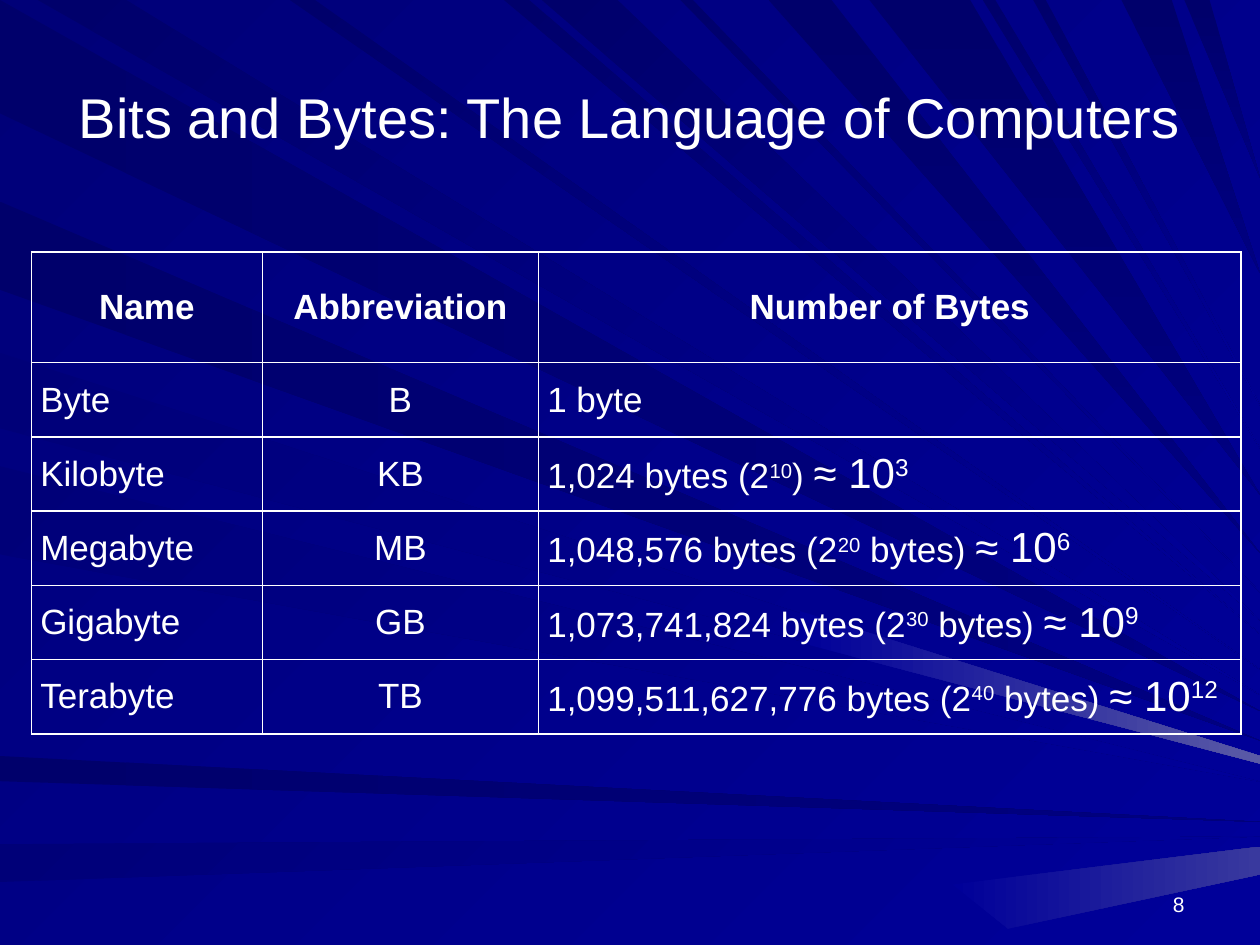
from collections import namedtuple

from lxml import etree
from pptx import Presentation
from pptx import util as u
from pptx.dml.color import RGBColor
from pptx.enum import text
from pptx.oxml import ns

Box = namedtuple("Box", "left top width height")

WHITE = RGBColor(0xFF, 0xFF, 0xFF)
DARK = RGBColor(0x00, 0x00, 0x6B)
DEEP = RGBColor(0x00, 0x00, 0x78)
NAVY = RGBColor(0x00, 0x00, 0x80)
BLUE = RGBColor(0x00, 0x00, 0x99)
GLOW = RGBColor(0x5A, 0x5A, 0xA6)
DIM_GLOW = RGBColor(0x39, 0x39, 0x9E)

FONT = "Arial"
LEFT, CENTER, RIGHT = text.PP_ALIGN.LEFT, text.PP_ALIGN.CENTER, text.PP_ALIGN.RIGHT
MIDDLE, BOTTOM = text.MSO_ANCHOR.MIDDLE, text.MSO_ANCHOR.BOTTOM

GRID = 10
FOCUS_X, FOCUS_Y = 11.84, 6.6
COLUMN_WEIGHTS = (1.83, 2.19, 5.57)
ROW_WEIGHTS = (0.88,) + (0.59,) * 5
HEADINGS = ("Name", "Abbreviation", "Number of Bytes")
UNITS = (("Byte", "B"), ("Kilobyte", "KB"), ("Megabyte", "MB"), ("Gigabyte", "GB"), ("Terabyte", "TB"))

LEFT_DARK_RAYS = ((0, 0.9), (1.6, 2.3), (6, 6.2))
LEFT_BLUE_RAYS = ((2.8, 3.4), (3.7, 4.4), (6.7, 7))
TOP_DARK_RAYS = ((6.1, 6.6), (6.9, 7.7), (8.9, 9.3), (9.4, 9.6))
TOP_BLUE_RAYS = ((0.3, 1), (2.3, 2.5), (4, 4.2), (4.3, 4.9), (5.4, 5.5), (7.8, 7.9), (8.2, 8.3))


def share(box, left, top, width, height):
    """Return the part of a box given by shares of its size."""
    return Box(
        int(box.left + box.width * left),
        int(box.top + box.height * top),
        int(box.width * width),
        int(box.height * height),
    )


def paint(fill, start, end, angle):
    """Fill with a gradient turned clockwise by angle."""
    fill.gradient()
    fill.gradient_angle = -angle % 360
    for stop, colour in zip(fill.gradient_stops, (start, end)):
        stop.color.rgb = colour


def add_text(para, words, size=20, bold=False, raised=False, align=LEFT):
    """Add a formatted run to a paragraph."""
    para.alignment = align
    span = para.add_run()
    span.text = words
    span.font.name = FONT
    span.font.size = u.Pt(size)
    span.font.bold = bold
    span.font.color.rgb = WHITE
    if raised:
        span.font._element.set("baseline", "30000")


def draw_ray(group, box, corners, start, end, angle):
    """Draw one ray through corners given in grid columns."""
    unit = box.width / GRID
    points = [(box.left + x * unit, box.top + y * unit) for x, y in corners]
    builder = group.shapes.build_freeform(*points[0])
    builder.add_line_segments(points[1:], close=True)
    ray = builder.convert_to_shape()
    ray.shadow.inherit = False
    ray.line.fill.background()
    paint(ray.fill, start, end, angle)


def find_tip(x, y):
    """Return where the line from a point to the focus meets the right edge."""
    return GRID, y + (FOCUS_Y - y) * (GRID - x) / (FOCUS_X - x)


def draw_rays(page, box):
    """Draw the fan of light rays over the background."""
    paint(page.background.fill, DEEP, BLUE, 45)
    group = page.shapes.add_group_shape()
    for rays, start, end, angle in ((LEFT_DARK_RAYS, DARK, NAVY, 0), (LEFT_BLUE_RAYS, DEEP, BLUE, 45)):
        for near, far in rays:
            tip = find_tip(0, (near + far) / 2)
            draw_ray(group, box, ((0, near), tip, (0, far)), start, end, angle)
    for rays, start, end, angle in ((TOP_BLUE_RAYS, DARK, BLUE, 45), (TOP_DARK_RAYS, DARK, NAVY, 90)):
        for near, far in rays:
            tip = find_tip((near + far) / 2, 0)
            draw_ray(group, box, ((near, 0), tip, (far, 0)), start, end, angle)
    draw_ray(group, box, ((6.35, 4.85), (10, 6), (10, 6.06), (6.35, 5.1)), BLUE, GLOW, 0)
    draw_ray(group, box, ((7.56, 7.02), (10, 6.72), (10, 6.94), (8, 7.37)), BLUE, DIM_GLOW, 0)
    page.shapes._spTree.insert(2, group._element)


def draw_title(page, box):
    """Place the slide title in its placeholder."""
    title = page.shapes.title
    title.left, title.top, title.width, title.height = box
    frame = title.text_frame
    frame.auto_size = text.MSO_AUTO_SIZE.NONE
    frame.vertical_anchor = MIDDLE
    add_text(frame.paragraphs[0], "Bits and Bytes: The Language of Computers", size=32, align=CENTER)


def draw_number(page, box):
    """Place the page number at the lower right."""
    frame = page.shapes.add_textbox(*box).text_frame
    frame.word_wrap = True
    frame.vertical_anchor = BOTTOM
    add_text(frame.paragraphs[0], "8", size=12, align=RIGHT)


def format_cell(cell):
    """Give a cell thin white borders, no fill and narrow margins."""
    properties = cell._tc.get_or_add_tcPr()
    for side in ("a:lnL", "a:lnR", "a:lnT", "a:lnB"):
        border = etree.SubElement(properties, ns.qn(side), w=str(u.Pt(1)))
        solid = etree.SubElement(border, ns.qn("a:solidFill"))
        etree.SubElement(solid, ns.qn("a:srgbClr"), val=str(WHITE))
    cell.fill.background()
    cell.vertical_anchor = MIDDLE
    cell.margin_left = cell.margin_right = u.Inches(0.07)
    cell.margin_top = cell.margin_bottom = 0


def write_size(para, power):
    """Write the number of bytes in the unit of the given power of 1,024."""
    if power == 0:
        add_text(para, "1 byte")
        return
    add_text(para, f"{1024 ** power:,} bytes (2")
    add_text(para, str(10 * power), raised=True)
    add_text(para, ") " if power == 1 else " bytes) ")
    add_text(para, "≈ 10", size=24)
    add_text(para, str(3 * power), size=24, raised=True)


def draw_table(page, box):
    """Draw the table of byte units."""
    table = page.shapes.add_table(len(ROW_WEIGHTS), len(COLUMN_WEIGHTS), *box).table
    table.first_row = table.horz_banding = False
    for column, weight in zip(table.columns, COLUMN_WEIGHTS):
        column.width = int(box.width * weight / sum(COLUMN_WEIGHTS))
    for row, weight in zip(table.rows, ROW_WEIGHTS):
        row.height = int(box.height * weight / sum(ROW_WEIGHTS))
    for cell in table.iter_cells():
        format_cell(cell)
    for cell, heading in zip(table.rows[0].cells, HEADINGS):
        add_text(cell.text_frame.paragraphs[0], heading, bold=True, align=CENTER)
    for power, (name, abbreviation) in enumerate(UNITS):
        paras = [cell.text_frame.paragraphs[0] for cell in table.rows[power + 1].cells]
        add_text(paras[0], name)
        add_text(paras[1], abbreviation, align=CENTER)
        write_size(paras[2], power)


def main():
    """Build the slide and save it."""
    deck = Presentation()
    deck.slide_width, deck.slide_height = u.Inches(10), u.Inches(7.5)
    page = deck.slides.add_slide(deck.slide_layouts[5])
    whole = Box(0, 0, deck.slide_width, deck.slide_height)
    draw_rays(page, whole)
    draw_title(page, share(whole, 0.05, 0.04, 0.9, 1 / 6))
    draw_table(page, share(whole, 0.025, 4 / 15, 0.96, 0.51))
    draw_number(page, share(whole, 0.72, 0.91, 0.23, 1 / 15))
    deck.save("out.pptx")


if __name__ == "__main__":
    main()
